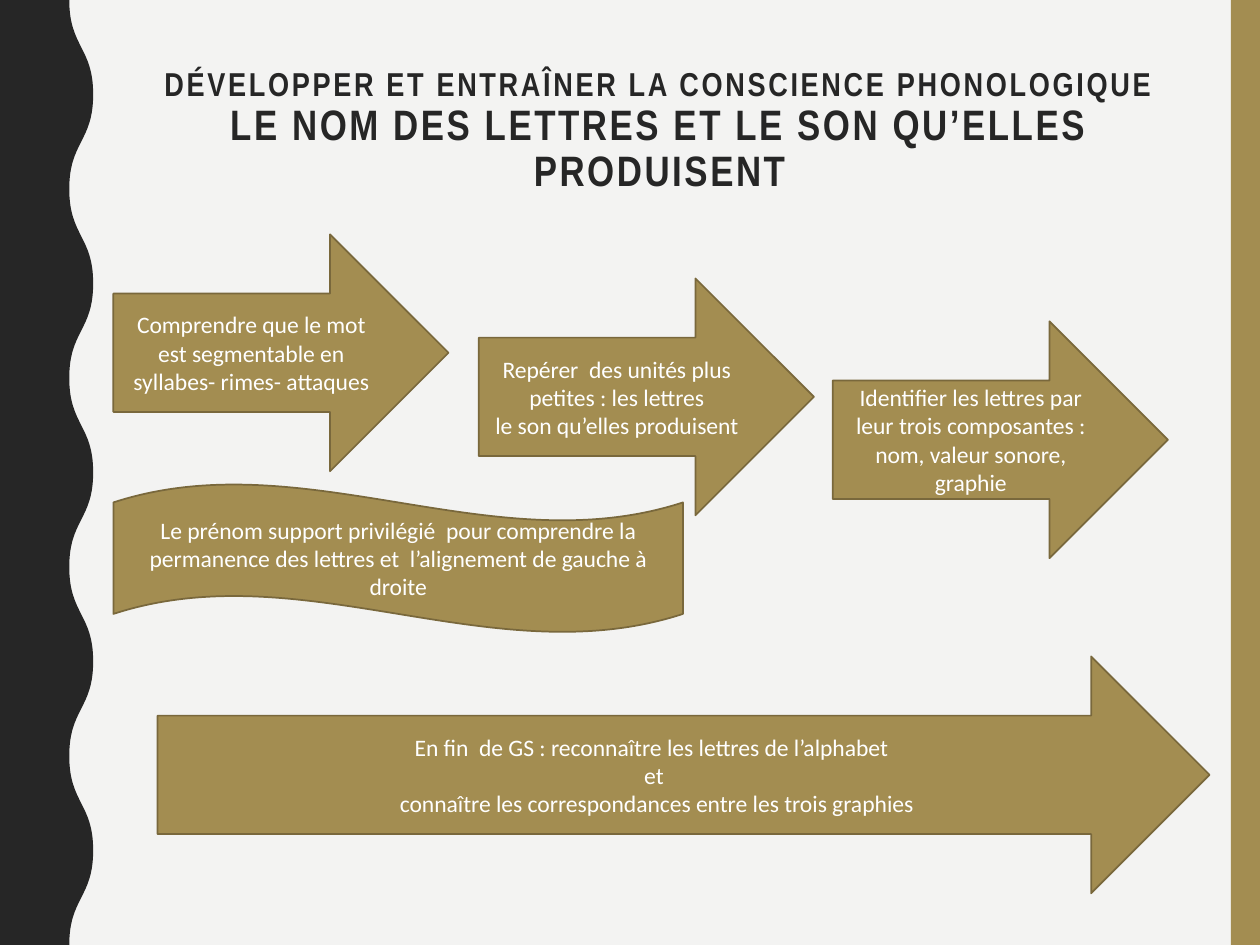
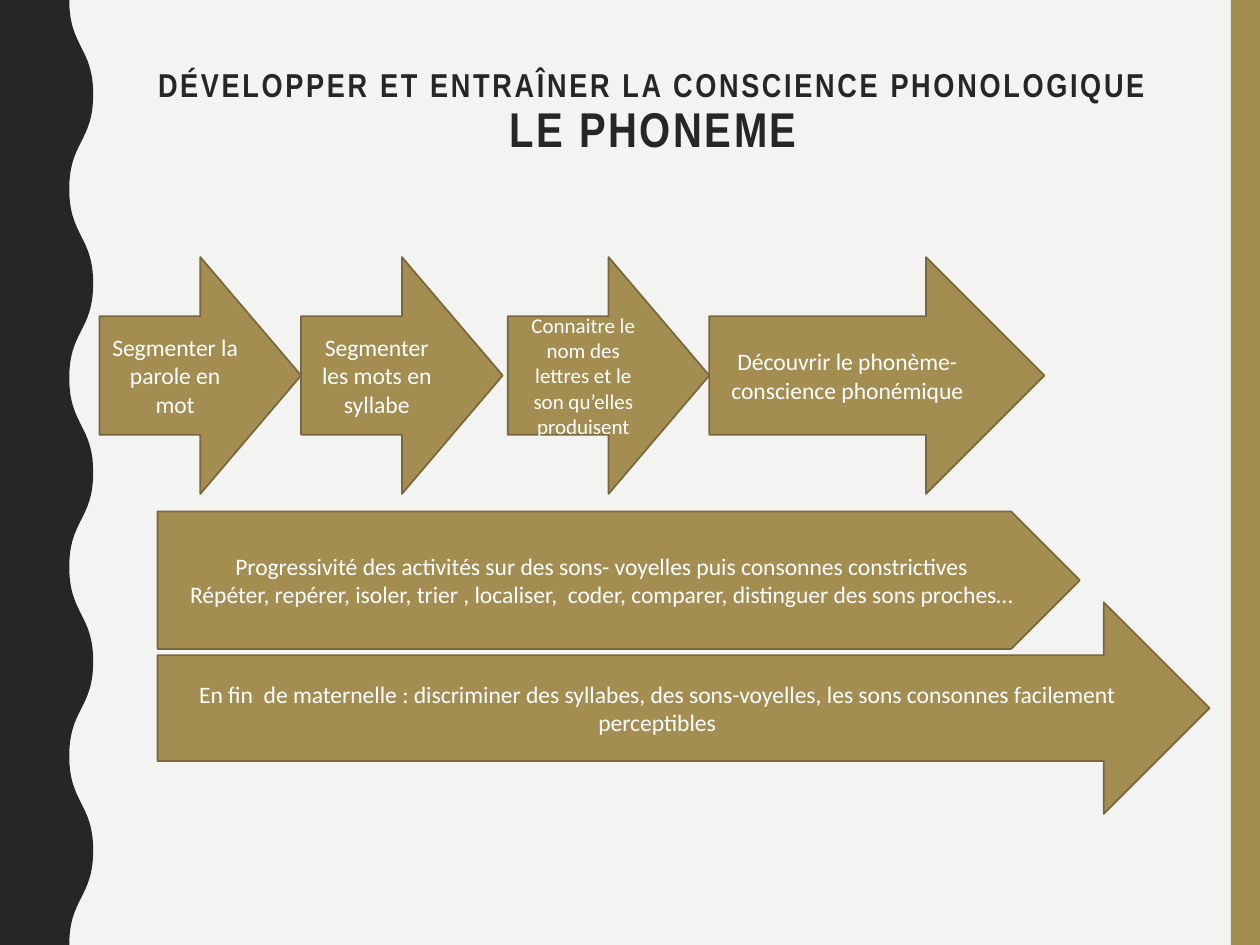
from dataclasses import dataclass

from lxml import etree
from pptx import Presentation
from pptx import util as u
from pptx.dml import color
from pptx.enum import shapes, text
from pptx.oxml import ns


@dataclass(frozen=True)
class Theme:
    paper: color.RGBColor = color.RGBColor.from_string("F3F3F2")
    gold: color.RGBColor = color.RGBColor.from_string("A38D51")
    outline: color.RGBColor = color.RGBColor.from_string("79683C")
    dark: color.RGBColor = color.RGBColor.from_string("262626")
    white: color.RGBColor = color.RGBColor.from_string("FFFFFF")
    title_font: str = "Arial Narrow"
    body_font: str = "Calibri"
    heading: float = 18.9
    body: float = 13.5
    small: float = 12
    tracking: str = "150"


@dataclass(frozen=True)
class Step:
    left: float
    top: float
    width: float
    height: float
    lines: tuple[str, ...]
    kind: shapes.MSO_SHAPE = shapes.MSO_SHAPE.RIGHT_ARROW
    size: float = Theme.body


@dataclass(frozen=True)
class Page:
    left: float
    top: float
    topic: str
    topic_size: float
    steps: tuple[Step, ...]


THEME = Theme()
WIDTH, HEIGHT = 10, 7.5
HEADING = "DÉVELOPPER ET ENTRAÎNER LA CONSCIENCE PHONOLOGIQUE"
UNITS_PER_INCH = 1000
TROUGH, CREST, HALF_WAVE, WAVE_END = 550, 740, 750, 7500
ARROW_W, NARROW_W, ARROW_H = 2.66, 1.6, 1.88
GOAL_LEFT, GOAL_W = 1.25, 8.35
ROW_TOP = 2.04

PAGES = (
    Page(1.06, 0.48, "LE NOM DES LETTRES ET LE SON QU’ELLES PRODUISENT", 24.3, (
        Step(GOAL_LEFT, 5.21, GOAL_W, ARROW_H, (
            "En fin  de GS : reconnaître les lettres de l’alphabet ",
            "et",
            " connaître les correspondances entre les trois graphies")),
        Step(0.9, 1.86, ARROW_W, ARROW_H, (
            "Comprendre que le mot est segmentable en syllabes- rimes- attaques",)),
        Step(3.8, 2.21, ARROW_W, ARROW_H, (
            "Repérer  des unités plus petites : les lettres",
            "le son qu’elles produisent")),
        Step(6.61, 2.55, ARROW_W, ARROW_H, (
            "Identifier les lettres par leur trois composantes : "
            "nom, valeur sonore, graphie",)),
        Step(0.9, 3.84, 4.52, 1.18, (
            "Le prénom support privilégié  pour comprendre la permanence "
            "des lettres et  l’alignement de gauche à droite",),
            shapes.MSO_SHAPE.WAVE),
    )),
    Page(1.01, 0.49, "LE PHONEME", 27.9, (
        Step(GOAL_LEFT, 4.78, GOAL_W, 1.68, (
            "En fin  de maternelle : discriminer des syllabes, des sons-voyelles, "
            "les sons consonnes facilement perceptibles",)),
        Step(0.79, ROW_TOP, NARROW_W, ARROW_H, ("Segmenter la parole en mot",)),
        Step(5.63, ROW_TOP, ARROW_W, ARROW_H, (
            "Découvrir le phonème- conscience phonémique",)),
        Step(2.39, ROW_TOP, NARROW_W, ARROW_H, ("Segmenter les mots en syllabe",)),
        Step(4.03, ROW_TOP, NARROW_W, ARROW_H, (
            "Connaitre le nom des lettres et le son qu’elles produisent",),
            size=THEME.small),
        Step(GOAL_LEFT, 4.06, 7.32, 1.09, (
            "Progressivité des activités sur des sons- voyelles puis consonnes constrictives",
            "Répéter, repérer, isoler, trier , localiser,  coder, comparer, "
            "distinguer des sons proches…"),
            shapes.MSO_SHAPE.PENTAGON),
    )),
)


def paint(sp, fill: color.RGBColor) -> None:
    sp.shadow.inherit = False
    sp.fill.solid()
    sp.fill.fore_color.rgb = fill
    sp.line.fill.background()


def curve_segments(sp, knots: list[tuple[int, int]]) -> None:
    lines = list(sp.element.iter(ns.qn("a:lnTo")))[1:len(knots)]
    for line, (x0, y0), (x1, y1) in zip(lines, knots, knots[1:]):
        middle = (y0 + y1) // 2
        line.tag = ns.qn("a:cubicBezTo")
        for child in list(line):
            line.remove(child)
        for x, y in ((x0, middle), (x1, middle), (x1, y1)):
            etree.SubElement(line, ns.qn("a:pt"), x=str(x), y=str(y))


def add_bands(slide) -> None:
    band = slide.shapes.add_shape(
        shapes.MSO_SHAPE.RECTANGLE, u.Inches(9.77), 0, u.Inches(0.23), u.Inches(HEIGHT))
    paint(band, THEME.gold)
    knots = [((TROUGH, CREST)[i % 2], i * HALF_WAVE)
             for i in range(WAVE_END // HALF_WAVE + 1)]
    builder = slide.shapes.build_freeform(0, 0, scale=u.Inches(1) / UNITS_PER_INCH)
    builder.add_line_segments([*knots, (0, WAVE_END)], close=True)
    edge = builder.convert_to_shape()
    curve_segments(edge, knots)
    paint(edge, THEME.dark)


def set_frame(tf, anchor: text.MSO_ANCHOR, inset: float) -> None:
    tf.word_wrap = True
    tf.vertical_anchor = anchor
    tf.margin_left = tf.margin_right = u.Inches(0.08)
    tf.margin_top = tf.margin_bottom = u.Inches(inset)


def set_font(p, name: str, ink: color.RGBColor) -> None:
    p.alignment = text.PP_ALIGN.CENTER
    p.font.name = name
    p.font.color.rgb = ink


def add_title(slide, page: Page) -> None:
    sp = slide.shapes.add_textbox(
        u.Inches(page.left), u.Inches(page.top), u.Inches(8.35), u.Inches(0.79))
    set_frame(sp.text_frame, text.MSO_ANCHOR.TOP, 0.06)
    p = sp.text_frame.paragraphs[0]
    set_font(p, THEME.title_font, THEME.dark)
    p.font.bold = True
    p.line_spacing = 0.9
    for i, (words, size) in enumerate(
            ((HEADING, THEME.heading), (page.topic, page.topic_size))):
        if i:
            p.add_line_break()
        r = p.add_run()
        r.text = words
        r.font.size = u.Pt(size)
        r._r.get_or_add_rPr().set("spc", THEME.tracking)


def add_step(slide, step: Step) -> None:
    sp = slide.shapes.add_shape(
        step.kind, u.Inches(step.left), u.Inches(step.top),
        u.Inches(step.width), u.Inches(step.height))
    paint(sp, THEME.gold)
    sp.line.color.rgb = THEME.outline
    sp.line.width = u.Pt(1)
    tf = sp.text_frame
    set_frame(tf, text.MSO_ANCHOR.MIDDLE, 0.04)
    tf.text = "\n".join(step.lines)
    for p in tf.paragraphs:
        set_font(p, THEME.body_font, THEME.white)
        p.font.size = u.Pt(step.size)


def main() -> None:
    prs = Presentation()
    prs.slide_width, prs.slide_height = u.Inches(WIDTH), u.Inches(HEIGHT)
    background = prs.slide_master.background.fill
    background.solid()
    background.fore_color.rgb = THEME.paper
    for page in PAGES:
        slide = prs.slides.add_slide(prs.slide_layouts[6])
        add_bands(slide)
        add_title(slide, page)
        for step in page.steps:
            add_step(slide, step)
    prs.save("out.pptx")


if __name__ == "__main__":
    main()
